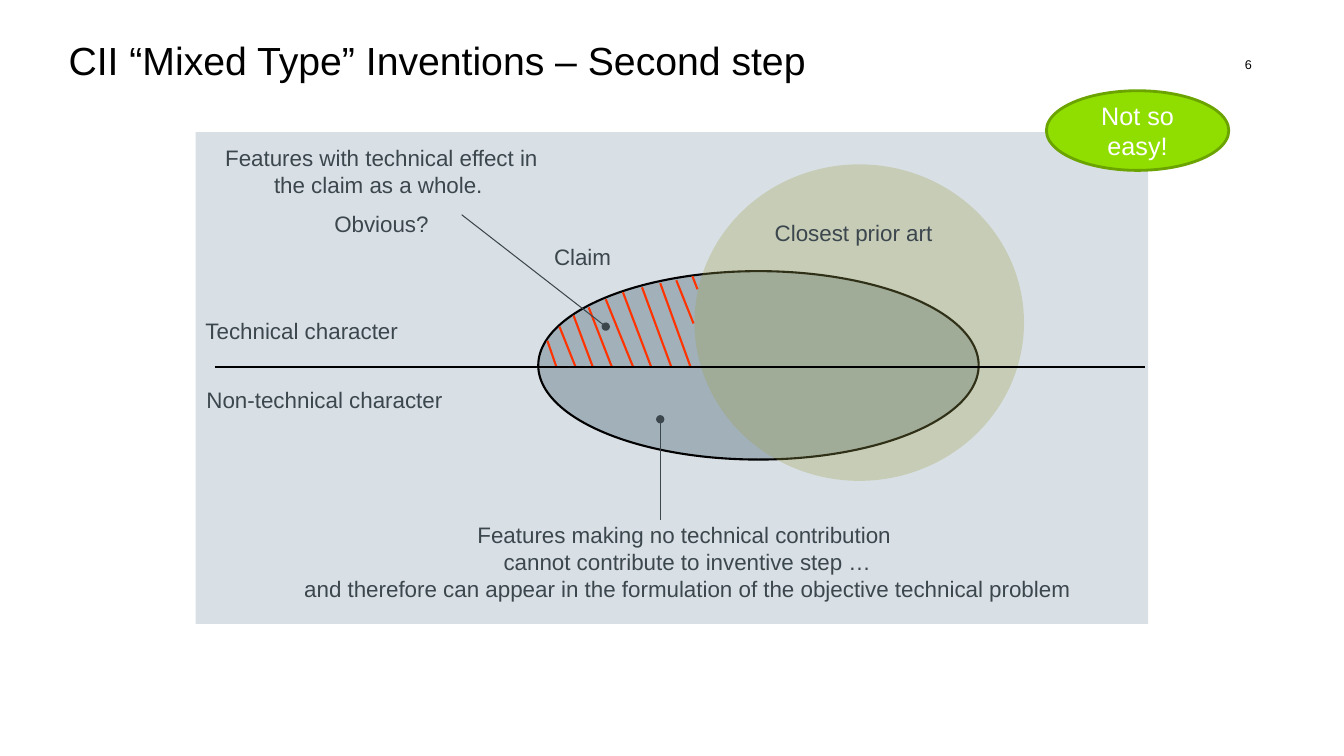
from dataclasses import dataclass
from typing import Optional

from lxml.etree import SubElement
from pptx import Presentation
from pptx.dml.color import RGBColor
from pptx.enum.shapes import MSO_CONNECTOR, MSO_SHAPE
from pptx.enum.text import MSO_ANCHOR, PP_ALIGN
from pptx.oxml.ns import qn
from pptx.shapes.autoshape import Shape
from pptx.slide import Slide
from pptx.text.text import TextFrame
from pptx.util import Pt


@dataclass(frozen=True)
class Theme:
    font: str = "Arial"
    black: str = "000000"
    label: str = "3B464D"
    white: str = "FFFFFF"
    panel: str = "C1CCD5"
    claim: str = "94A4AE"
    prior_art: str = "9FA04E"
    hatch: str = "FF3300"
    badge: str = "90DE00"
    badge_edge: str = "6BA400"
    title_size: float = 28
    badge_size: float = 18
    label_size: float = 16
    number_size: float = 9
    heavy_line: float = 1.5
    badge_line: float = 2
    thin_line: float = 0.75


THEME = Theme()
AXIS_Y = 262


@dataclass(frozen=True)
class Region:
    kind: MSO_SHAPE
    frame: tuple[float, float, float, float]
    fill: str
    opacity: int = 100
    edge: Optional[str] = None
    edge_width: float = THEME.heavy_line


@dataclass(frozen=True)
class Label:
    frame: tuple[float, float, float, float]
    lines: tuple[str, ...]
    align: PP_ALIGN = PP_ALIGN.CENTER
    size: float = THEME.label_size
    color: str = THEME.label
    inset: tuple[float, float] = (7.2, 3.6)
    gap: float = 0


@dataclass(frozen=True)
class Line:
    start: tuple[float, float]
    end: tuple[float, float]
    color: str = THEME.label
    width: float = THEME.thin_line
    dot_end: bool = False


PANEL = Region(MSO_SHAPE.RECTANGLE, (139.7, 94.3, 680.4, 351.4), THEME.panel, 60)
CLAIM = Region(MSO_SHAPE.OVAL, (384.5, 193.7, 314.6, 134.6), THEME.claim, 80, THEME.black)
PRIOR_ART = Region(MSO_SHAPE.OVAL, (496.1, 117.4, 235.4, 226.1), THEME.prior_art, 30)
BADGE = Region(MSO_SHAPE.OVAL, (747.4, 64.8, 130.3, 56.9), THEME.badge,
               edge=THEME.badge_edge, edge_width=THEME.badge_line)

HEADINGS = (
    Label((670.3, 40.3, 223.9, 17.3), ("6",), PP_ALIGN.RIGHT,
          THEME.number_size, THEME.black, (0, 0)),
    Label((49, 25.9, 830.2, 77), ("CII “Mixed Type” Inventions – Second step",),
          PP_ALIGN.LEFT, THEME.title_size, THEME.black, (0, 0)),
)
LABELS = (
    Label((512.6, 156.2, 198.7, 23), ("Closest prior art ",), inset=(0, 0)),
    Label((145.4, 99.4, 254.2, 74.9),
          ("Features with technical effect in the claim as a whole. ", "Obvious?"), gap=9),
    Label((367.2, 169.9, 97.9, 31.7), ("Claim",)),
    Label((185, 368.6, 612, 65.5),
          ("Features making no technical contribution ",
           "cannot contribute to inventive step …",
           "and therefore can appear in the formulation of the objective technical problem")),
    Label((139.7, 223.2, 168.5, 31.7), ("Technical character",), PP_ALIGN.LEFT),
    Label((140.4, 272.2, 203, 31.7), ("Non-technical character",), PP_ALIGN.LEFT),
)
BADGE_LABEL = Label(BADGE.frame, ("Not so easy!",), size=THEME.badge_size, color=THEME.white)

HATCH_TO_AXIS = (
    (391, 243.4, 397.4), (399.6, 233.3, 411.1), (409.7, 225.4, 423.4), (420.5, 219.6, 437),
    (432.7, 213.8, 452.2), (445, 208.8, 465.1), (458.6, 205.2, 479.5), (471.6, 202.3, 493.2),
)
HATCH_TO_PRIOR_ART = (((483.1, 200.2), (495.4, 231.1)), ((494.6, 197.3), (498.2, 206.6)))
HATCH_ENDS = (
    *(((top_x, top_y), (foot_x, AXIS_Y)) for top_x, top_y, foot_x in HATCH_TO_AXIS),
    *HATCH_TO_PRIOR_ART,
)
LINES = (
    *(Line(start, end, THEME.hatch, THEME.heavy_line) for start, end in HATCH_ENDS),
    Line((329.8, 153.4), (432.7, 233.3), dot_end=True),
    Line((471.6, 371.5), (471.6, 299.5), dot_end=True),
    Line((153.4, AXIS_Y), (817.9, AXIS_Y), THEME.black, THEME.heavy_line),
)


def draw_region(page: Slide, region: Region) -> Shape:
    """Draw a filled shape with optional transparency and edge."""
    shape = page.shapes.add_shape(region.kind, *map(Pt, region.frame))
    shape.shadow.inherit = False
    shape.fill.solid()
    shape.fill.fore_color.rgb = RGBColor.from_string(region.fill)
    if region.opacity < 100:
        color = shape.fill._xPr.find(qn("a:solidFill"))[0]
        SubElement(color, qn("a:alpha"), val=str(region.opacity * 1000))
    if region.edge:
        shape.line.color.rgb = RGBColor.from_string(region.edge)
        shape.line.width = Pt(region.edge_width)
    else:
        shape.line.fill.background()
    return shape


def write_label(frame: TextFrame, label: Label) -> None:
    """Fill a text frame with the paragraphs of a label."""
    frame.word_wrap = True
    frame.margin_left = frame.margin_right = Pt(label.inset[0])
    frame.margin_top = frame.margin_bottom = Pt(label.inset[1])
    for index, line in enumerate(label.lines):
        para = frame.add_paragraph() if index else frame.paragraphs[0]
        para.text = line
        para.alignment = label.align
        if index:
            para.space_before = Pt(label.gap)
        para.font.name = THEME.font
        para.font.size = Pt(label.size)
        para.font.color.rgb = RGBColor.from_string(label.color)


def draw_label(page: Slide, label: Label) -> None:
    """Place a label in its own text box."""
    box = page.shapes.add_textbox(*map(Pt, label.frame))
    write_label(box.text_frame, label)


def draw_line(page: Slide, line: Line) -> None:
    """Draw a straight line, with a dot at its end if asked."""
    connector = page.shapes.add_connector(
        MSO_CONNECTOR.STRAIGHT, *map(Pt, (*line.start, *line.end)))
    connector.line.color.rgb = RGBColor.from_string(line.color)
    connector.line.width = Pt(line.width)
    if line.dot_end:
        SubElement(connector.line._get_or_add_ln(), qn("a:tailEnd"), type="oval")
    SubElement(connector._element.spPr, qn("a:effectLst"))


def main() -> None:
    """Build the slide and save it."""
    deck = Presentation()
    deck.slide_width, deck.slide_height = Pt(960), Pt(540)
    page = deck.slides.add_slide(deck.slide_layouts[6])
    for heading in HEADINGS:
        draw_label(page, heading)
    for region in (PANEL, CLAIM, PRIOR_ART):
        draw_region(page, region)
    for line in LINES:
        draw_line(page, line)
    for label in LABELS:
        draw_label(page, label)
    badge = draw_region(page, BADGE)
    badge.text_frame.vertical_anchor = MSO_ANCHOR.MIDDLE
    write_label(badge.text_frame, BADGE_LABEL)
    deck.save("out.pptx")


if __name__ == "__main__":
    main()
